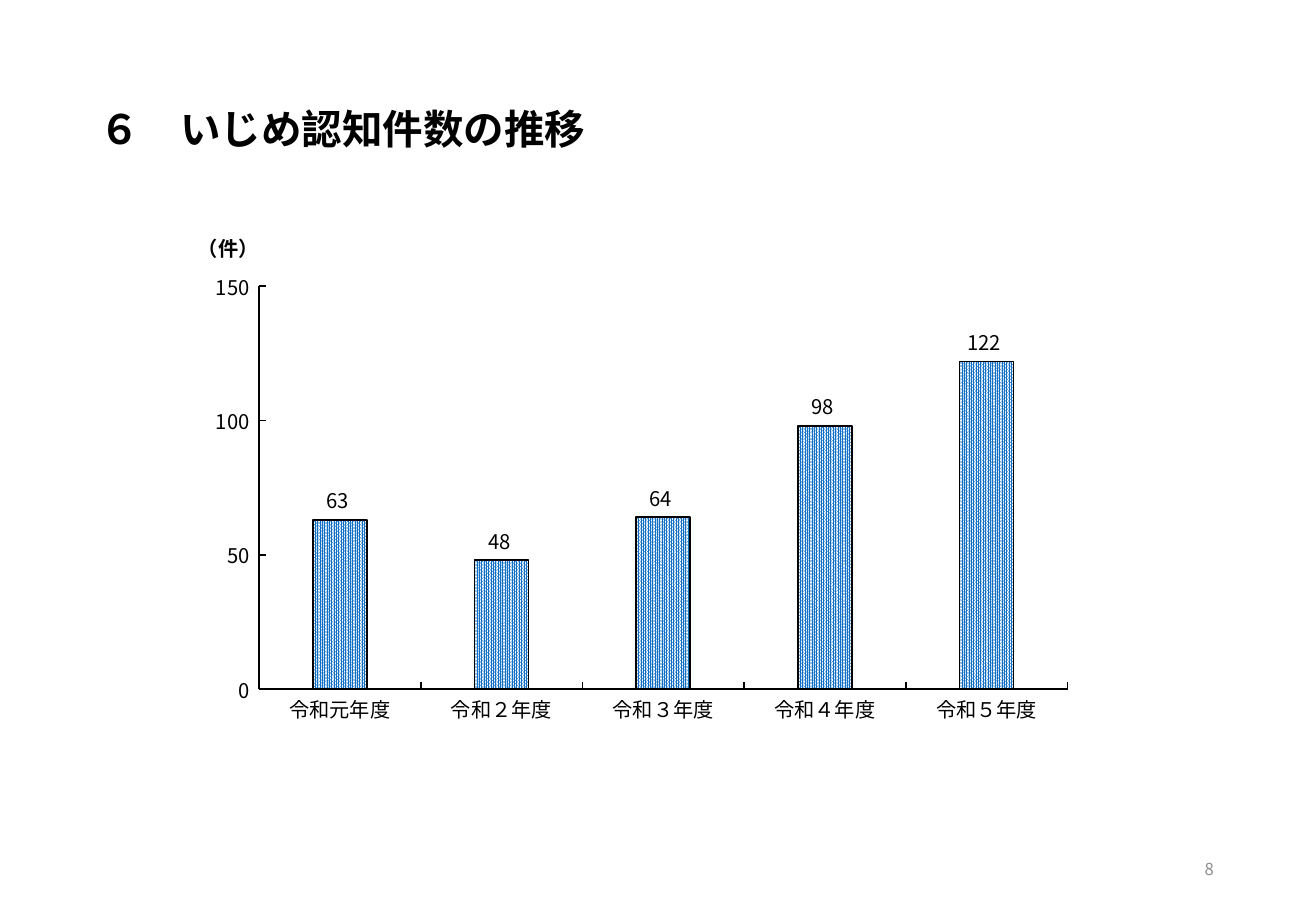
from dataclasses import dataclass
from typing import Any

from lxml import etree
from pptx import Presentation
from pptx import util as u
from pptx.chart.data import CategoryChartData
from pptx.dml.color import RGBColor
from pptx.enum import chart as ch, dml, text
from pptx.oxml.ns import qn

COLS, ROWS = 130, 90
CELL = u.Inches(1 / 12)


@dataclass(frozen=True)
class Theme:
    font: str = "Noto Sans CJK JP"
    ink: str = "000000"
    muted: str = "8C8C8C"
    bar: str = "0F6FC6"
    paper: str = "FFFFFF"
    title: float = 24
    label: float = 12
    page: float = 9.8
    line: float = 1


@dataclass(frozen=True)
class Area:
    """A rectangle in grid columns and rows."""
    col: float
    row: float
    cols: float
    rows: float

    def box(self) -> tuple[int, ...]:
        return tuple(round(n * CELL) for n in (self.col, self.row, self.cols, self.rows))


@dataclass(frozen=True)
class Label:
    words: str
    area: Area
    size: float
    color: str
    bold: bool
    align: Any
    frame: dict[str, Any]


THEME = Theme()
TITLE = Label("６　いじめ認知件数の推移", Area(8.6, 9.7, 51, 6), THEME.title, THEME.ink, True,
              text.PP_ALIGN.LEFT,
              {"word_wrap": False, "vertical_anchor": text.MSO_ANCHOR.TOP,
               "auto_size": text.MSO_AUTO_SIZE.SHAPE_TO_FIT_TEXT})
PAGE = Label("8", Area(91.8, 83.4, 29.3, 4.8), THEME.page, THEME.muted, False,
             text.PP_ALIGN.RIGHT,
             {"word_wrap": True, "vertical_anchor": text.MSO_ANCHOR.MIDDLE})
CHART_AREA = Area(13.1, 20.6, 101.5, 59.6)
COUNTS = {"令和元年度": 63, "令和２年度": 48, "令和３年度": 64, "令和４年度": 98, "令和５年度": 122}
NUMBER_FORMAT = r"#,##0_);[Red]\(#,##0\)"


def assign(target: Any, values: dict[str, Any]) -> None:
    for name, value in values.items():
        setattr(target, name, value)


def style_font(font: Any, size: float, color: str, bold: bool = False) -> None:
    assign(font, {"name": THEME.font, "size": u.Pt(size), "bold": bold})
    font.color.rgb = RGBColor.from_string(color)


def style_line(line: Any) -> None:
    line.color.rgb = RGBColor.from_string(THEME.ink)
    line.width = u.Pt(THEME.line)


def write_label(s: Any, label: Label) -> None:
    assign(s, dict(zip(("left", "top", "width", "height"), label.area.box())))
    tf = s.text_frame
    assign(tf, label.frame)
    p = tf.paragraphs[0]
    p.alignment = label.align
    r = p.add_run()
    r.text = label.words
    style_font(r.font, label.size, label.color, label.bold)


def set_layout(parent: Any, index: int, values: dict[str, Any]) -> None:
    """Give a chart part a manual layout, as shares of the chart."""
    for old in parent.findall(qn("c:layout")):
        parent.remove(old)
    layout = etree.Element(qn("c:layout"))
    manual = etree.SubElement(layout, qn("c:manualLayout"))
    for name, value in values.items():
        etree.SubElement(manual, qn(f"c:{name}")).set("val", str(value))
    parent.insert(index, layout)


def use_east_asian_font(root: Any) -> None:
    """Apply the theme font to Japanese glyphs wherever a Latin font is set."""
    for latin in list(root.iter(qn("a:latin"))):
        ea = etree.Element(qn("a:ea"))
        ea.set("typeface", THEME.font)
        latin.addnext(ea)


def style_axes(chart: Any) -> None:
    for axis in (chart.category_axis, chart.value_axis):
        assign(axis, {"has_major_gridlines": False,
                      "major_tick_mark": ch.XL_TICK_MARK.INSIDE,
                      "minor_tick_mark": ch.XL_TICK_MARK.NONE})
        style_line(axis.format.line)
        style_font(axis.tick_labels.font, THEME.label, THEME.ink)
    axis = chart.value_axis
    assign(axis, {"minimum_scale": 0, "maximum_scale": 150, "major_unit": 50})
    assign(axis.tick_labels, {"number_format": NUMBER_FORMAT, "number_format_is_linked": False})
    title = axis.axis_title
    p = title.text_frame.paragraphs[0]
    r = p.add_run()
    r.text = "（件）"
    style_font(r.font, THEME.label, THEME.ink, True)
    body = next(title.element.iter(qn("a:bodyPr")))
    body.set("rot", "0")
    body.set("vert", "horz")
    set_layout(title.element, 1, {"xMode": "edge", "yMode": "edge", "x": 0.06, "y": 0.03})


def add_counts_chart(slide: Any) -> None:
    data = CategoryChartData()
    data.categories = list(COUNTS)
    data.add_series("Series 1", list(COUNTS.values()))
    chart = slide.shapes.add_chart(ch.XL_CHART_TYPE.COLUMN_CLUSTERED,
                                   *CHART_AREA.box(), data).chart
    assign(chart, {"has_legend": False, "has_title": False})
    style_font(chart.font, THEME.label, THEME.ink)
    style_axes(chart)

    plot = chart.plots[0]
    assign(plot, {"gap_width": 200, "vary_by_categories": False, "has_data_labels": True})
    assign(plot.data_labels, {"show_value": True, "number_format": NUMBER_FORMAT,
                              "number_format_is_linked": False,
                              "position": ch.XL_LABEL_POSITION.OUTSIDE_END})
    style_font(plot.data_labels.font, THEME.label, THEME.ink)

    bars = plot.series[0].format
    bars.fill.patterned()
    bars.fill.pattern = dml.MSO_PATTERN.PERCENT_90
    bars.fill.fore_color.rgb = RGBColor.from_string(THEME.bar)
    bars.fill.back_color.rgb = RGBColor.from_string(THEME.paper)
    style_line(bars.line)

    set_layout(next(chart.element.iter(qn("c:plotArea"))), 0,
               {"layoutTarget": "inner", "xMode": "edge", "yMode": "edge",
                "x": 0.123, "y": 0.129, "w": 0.787, "h": 0.668})
    use_east_asian_font(chart.element)


def main() -> None:
    prs = Presentation()
    assign(prs, {"slide_width": COLS * CELL, "slide_height": ROWS * CELL})
    slide = prs.slides.add_slide(prs.slide_layouts.get_by_name("Title Only"))
    write_label(slide.shapes.title, TITLE)
    write_label(slide.shapes.add_textbox(*PAGE.area.box()), PAGE)
    add_counts_chart(slide)
    use_east_asian_font(slide.element)
    prs.save("out.pptx")


if __name__ == "__main__":
    main()
